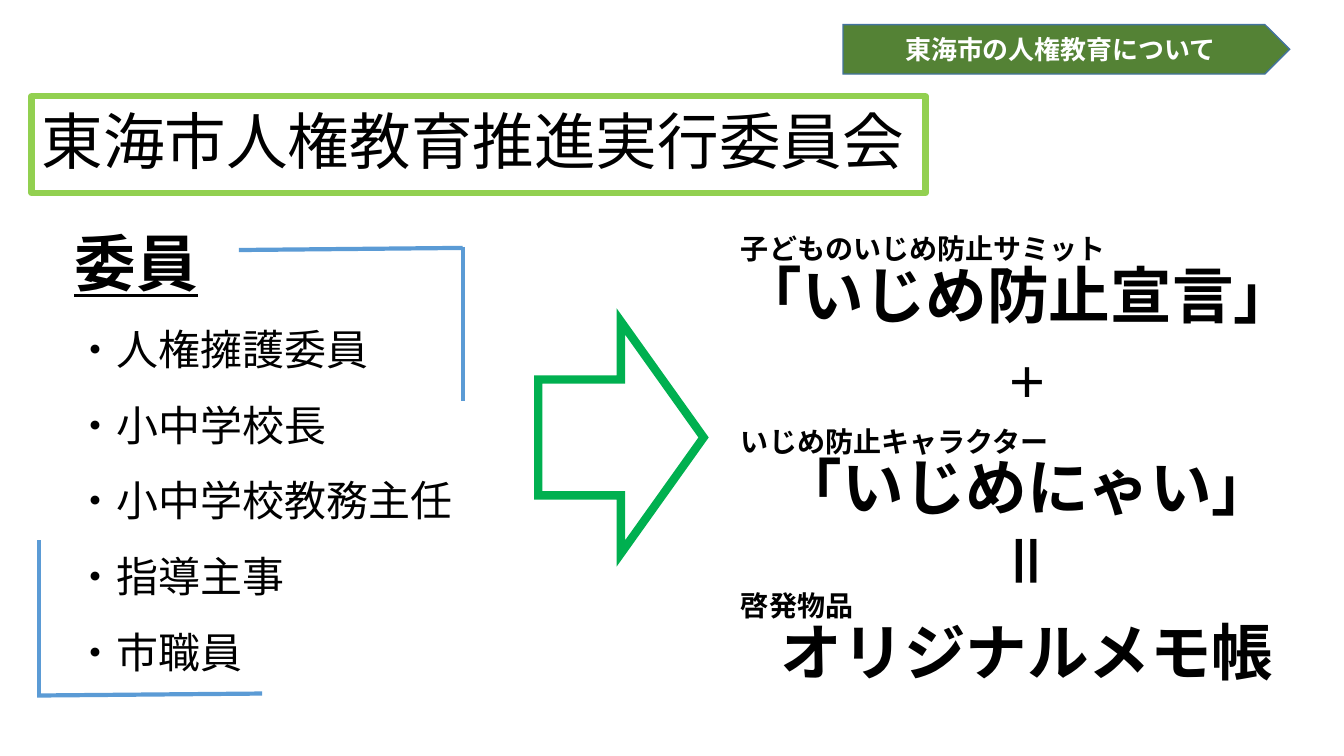
from dataclasses import dataclass

from lxml.etree import SubElement
from pptx import Presentation
from pptx.dml.color import RGBColor
from pptx.enum.lang import MSO_LANGUAGE_ID as Lang
from pptx.enum.shapes import MSO_CONNECTOR as Conn, MSO_SHAPE as Shape
from pptx.enum.text import MSO_ANCHOR as Anchor, MSO_AUTO_SIZE as Fit, PP_ALIGN as Align
from pptx.oxml.ns import qn
from pptx.util import Pt


@dataclass(frozen=True)
class Theme:
    font: str = "Noto Sans CJK JP"
    text: str = "000000"
    white: str = "FFFFFF"
    frame: str = "92D050"
    tag: str = "548235"
    tag_edge: str = "43739E"
    arrow: str = "00B050"
    bracket: str = "5B9BD5"
    big: float = 44
    body: float = 30
    label: float = 20
    tag_size: float = 18.5


T = Theme()
SLIDE = (960, 540)

TITLE = "東海市人権教育推進実行委員会"
TAG = "東海市の人権教育について"
MEMBERS_HEAD = "委員"
MEMBERS = ["人権擁護委員", "小中学校長", "小中学校教務主任", "指導主事", "市職員"]
# text, size, alignment, line spacing, space before
OUTCOMES = [
    ("子どものいじめ防止サミット", T.label, Align.LEFT, 2.0, 0),
    ("「いじめ防止宣言」", T.big, Align.LEFT, 0.9, 0),
    ("＋", T.body, Align.CENTER, 1.5, 0),
    ("いじめ防止キャラクター", T.label, Align.LEFT, 1.5, 0),
    ("「いじめにゃい」", T.big, Align.CENTER, 0.9, 0),
    ("啓発物品", T.label, Align.LEFT, 0.9, 48.5),
    ("オリジナルメモ帳", T.big, Align.CENTER, 0.9, 0),
]
EQUALS = "＝"

# left, top, width, height
TITLE_BOX = (22.5, 68.8, 638.6, 69.1)
TAG_BOX = (602.2, 17.6, 319, 35.3)
MEMBERS_BOX = (46.1, 121, 310.3, 375.1)
ARROW_BOX = (384.5, 229.7, 118.1, 165.6)
OUTCOMES_BOX = (522.2, 97.2, 423.4, 439.2)
EQUALS_BOX = (698.4, 374.4, 63.4, 57.6)
# each bracket: (start, end) of its two strokes
BRACKETS = [
    [((170.6, 178.6), (330.5, 177.1)), ((330.5, 176.4), (330.5, 286.6))],
    [((187.2, 495.4), (26.6, 496.8)), ((28.1, 496.1), (28.1, 385.9))],
]


def rgb(value):
    return RGBColor.from_string(value)


def pts(values):
    return [Pt(v) for v in values]


def set_line(line, color, width):
    line.color.rgb = rgb(color)
    line.width = Pt(width)


def add_run(p, text, size, color=T.text, bold=False, underline=False):
    r = p.add_run()
    r.text = text
    f = r.font
    f.size, f.bold, f.underline = Pt(size), bold, underline
    f.color.rgb = rgb(color)
    f.name = T.font
    f.language_id = Lang.JAPANESE
    SubElement(r._r.get_or_add_rPr(), qn("a:ea")).set("typeface", T.font)


def set_frame(tf):
    tf.word_wrap = True
    tf.auto_size = Fit.NONE
    tf.vertical_anchor = Anchor.MIDDLE


def fill_text(tf, rows):
    """Write rows of (text, size, alignment, line spacing, space before, run options)."""
    set_frame(tf)
    for i, (text, size, align, spacing, before, options) in enumerate(rows):
        p = tf.add_paragraph() if i else tf.paragraphs[0]
        p.alignment, p.line_spacing, p.space_before = align, spacing, Pt(before)
        add_run(p, text, size, **options)


def add_text(shapes, box, rows):
    s = shapes.add_textbox(*pts(box))
    fill_text(s.text_frame, rows)
    return s


def add_block(shapes, kind, box, fill, line, width):
    """Add a preset shape with sharp outline corners; no fill when fill is None."""
    s = shapes.add_shape(kind, *pts(box))
    s.shadow.inherit = False
    if fill:
        s.fill.solid()
        s.fill.fore_color.rgb = rgb(fill)
    else:
        s.fill.background()
    set_line(s.line, line, width)
    SubElement(s._element.spPr.find(qn("a:ln")), qn("a:miter")).set("lim", "800000")
    return s


def add_title(slide):
    s = slide.shapes.title
    s.left, s.top, s.width, s.height = pts(TITLE_BOX)
    set_line(s.line, T.frame, 4.5)
    fill_text(s.text_frame, [(TITLE, T.big, Align.LEFT, 0.9, 0, {})])


def add_members(shapes):
    head_style = {"bold": True, "underline": True}
    rows = [(MEMBERS_HEAD, T.big, Align.LEFT, 1.5, 0, head_style)]
    rows += [("・" + member, T.body, Align.LEFT, 1.5, 0, {}) for member in MEMBERS]
    add_text(shapes, MEMBERS_BOX, rows)


def add_outcomes(shapes):
    bold = {"bold": True}
    group = shapes.add_group_shape().shapes
    add_text(group, OUTCOMES_BOX, [(*row, bold) for row in OUTCOMES])
    s = add_text(group, EQUALS_BOX, [(EQUALS, T.big, Align.LEFT, 0.9, 0, bold)])
    s.rotation = 90


def add_bracket(shapes, strokes):
    group = shapes.add_group_shape().shapes
    for start, end in strokes:
        c = group.add_connector(Conn.STRAIGHT, *pts(start + end))
        set_line(c.line, T.bracket, 3)
        SubElement(c._element.spPr, qn("a:effectLst"))


def main():
    prs = Presentation()
    prs.slide_width, prs.slide_height = pts(SLIDE)
    slide = prs.slides.add_slide(prs.slide_layouts[5])
    sh = slide.shapes
    add_title(slide)
    tag = add_block(sh, Shape.PENTAGON, TAG_BOX, T.tag, T.tag_edge, 1)
    tag_style = {"color": T.white, "bold": True}
    fill_text(tag.text_frame, [(TAG, T.tag_size, Align.CENTER, 1.0, 0, tag_style)])
    add_members(sh)
    add_block(sh, Shape.RIGHT_ARROW, ARROW_BOX, None, T.arrow, 6)
    add_outcomes(sh)
    for strokes in BRACKETS:
        add_bracket(sh, strokes)
    prs.save("out.pptx")


if __name__ == "__main__":
    main()
